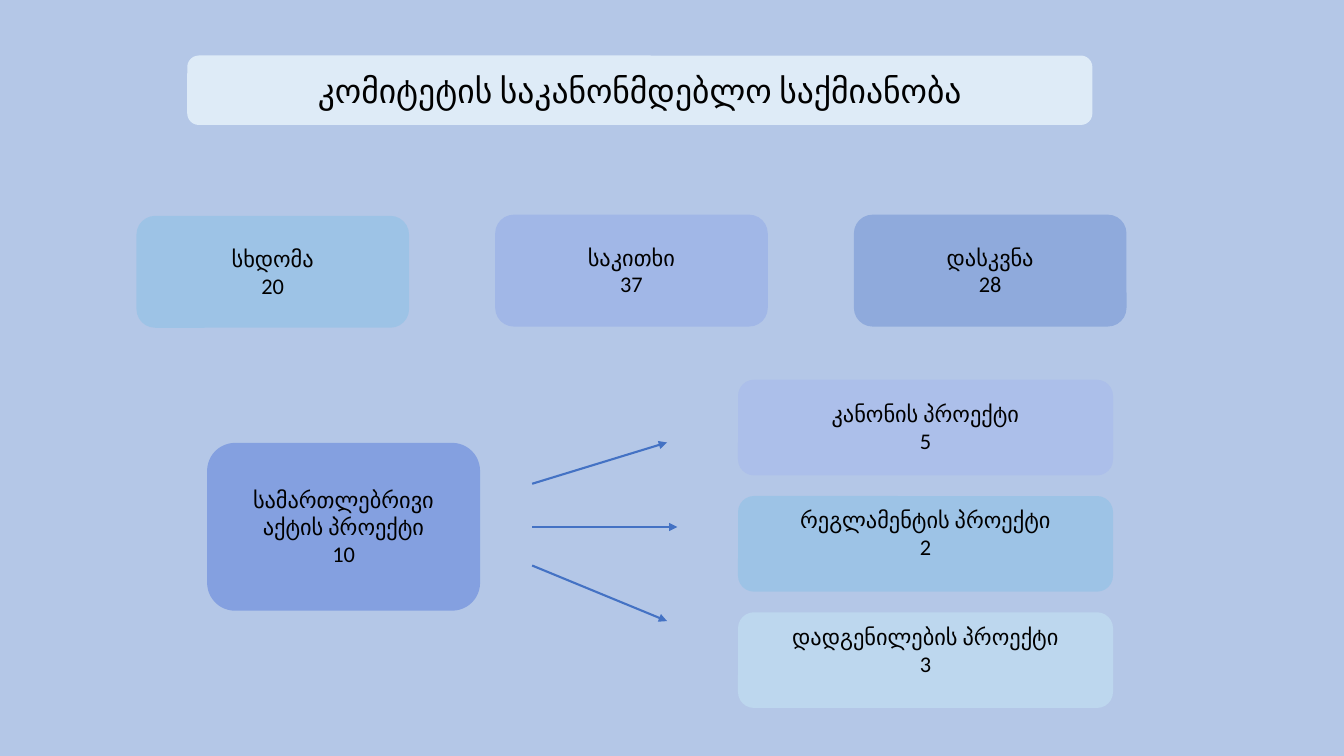
from dataclasses import dataclass

from lxml import etree
from pptx import Presentation
from pptx.dml.color import RGBColor
from pptx.enum.shapes import MSO_CONNECTOR, MSO_SHAPE
from pptx.enum.text import MSO_ANCHOR, PP_ALIGN
from pptx.oxml.ns import qn
from pptx.shapes.autoshape import Shape
from pptx.slide import Slide
from pptx.util import Cm, Pt

ROUNDED = MSO_SHAPE.ROUNDED_RECTANGLE
STRAIGHT = MSO_CONNECTOR.STRAIGHT
MIDDLE = MSO_ANCHOR.MIDDLE
CENTER = PP_ALIGN.CENTER


@dataclass(frozen=True)
class Theme:
    font: str = "Calibri"
    title_size: float = 24
    body_size: float = 16
    arrow_width: float = 1.5
    background: str = "B4C7E7"
    text: str = "000000"
    arrow: str = "4472C4"
    title_fill: str = "DEEBF7"
    sky: str = "9DC3E6"
    lavender: str = "A1B7E7"
    steel: str = "8FAADC"
    indigo: str = "84A0E0"
    lilac: str = "ACBFEA"
    ice: str = "BDD7EE"


@dataclass(frozen=True)
class Box:
    left: float
    top: float
    width: float
    height: float
    fill: str
    text: str = ""
    bottom_inset: float = 0.13


@dataclass(frozen=True)
class Arrow:
    start_y: float
    end_x: float
    end_y: float


THEME = Theme()
TITLE = Box(4.72, 1.4, 22.81, 1.75, THEME.title_fill, "კომიტეტის საკანონმდებლო საქმიანობა")
ACT = Box(5.22, 11.16, 6.88, 4.23, THEME.indigo, "სამართლებრივი აქტის პროექტი\n10")

CARD_LEFT, CARD_STEP = 3.44, 9.04
CARDS = [
    Box(CARD_LEFT + index * CARD_STEP, top, 6.87, 2.82, fill, text)
    for index, (top, fill, text) in enumerate([
        (5.44, THEME.sky, "სხდომა\n20"),
        (5.41, THEME.lavender, "საკითხი\n37"),
        (5.41, THEME.steel, "დასკვნა\n28"),
    ])
]

PROJECT_TOP, PROJECT_STEP = 9.57, 2.93
PROJECTS = [
    Box(18.6, PROJECT_TOP + index * PROJECT_STEP, 9.45, 2.41, fill, text, inset)
    for index, (fill, text, inset) in enumerate([
        (THEME.lilac, "კანონის პროექტი\n5", 0.13),
        (THEME.sky, "რეგლამენტის პროექტი\n2", 0.65),
        (THEME.ice, "დადგენილების პროექტი\n3", 0.65),
    ])
]

ARROW_START_X = 13.41
ARROWS = [Arrow(12.19, 16.81, 11.15), Arrow(13.28, 17.07, 13.28), Arrow(14.25, 16.81, 15.65)]


def color(value: str) -> RGBColor:
    return RGBColor.from_string(value)


def write_text(shape: Shape, text: str, size: float) -> None:
    text_frame = shape.text_frame
    text_frame.text = text
    text_frame.word_wrap = True
    text_frame.vertical_anchor = MIDDLE
    for paragraph in text_frame.paragraphs:
        paragraph.alignment = CENTER
        for run in paragraph.runs:
            run.font.name = THEME.font
            run.font.size = Pt(size)
            run.font.color.rgb = color(THEME.text)


def add_box(slide: Slide, box: Box) -> Shape:
    shape = slide.shapes.add_shape(
        ROUNDED, Cm(box.left), Cm(box.top), Cm(box.width), Cm(box.height)
    )
    shape.shadow.inherit = False
    shape.fill.solid()
    shape.fill.fore_color.rgb = color(box.fill)
    shape.line.fill.background()
    return shape


def add_card(slide: Slide, box: Box) -> None:
    shape = add_box(slide, box)
    write_text(shape, box.text, THEME.body_size)
    shape.text_frame.margin_bottom = Cm(box.bottom_inset)


def add_title(slide: Slide, box: Box) -> None:
    add_box(slide, box)
    title = slide.shapes.title
    title.left, title.top = Cm(box.left), Cm(box.top)
    title.width, title.height = Cm(box.width), Cm(box.height)
    write_text(title, box.text, THEME.title_size)
    tree = slide.shapes.element
    tree.remove(title.element)
    tree.append(title.element)


def add_arrow(slide: Slide, arrow: Arrow) -> None:
    connector = slide.shapes.add_connector(
        STRAIGHT, Cm(ARROW_START_X), Cm(arrow.start_y), Cm(arrow.end_x), Cm(arrow.end_y)
    )
    connector.line.color.rgb = color(THEME.arrow)
    connector.line.width = Pt(THEME.arrow_width)
    properties = connector.element.spPr
    etree.SubElement(properties.find(qn("a:ln")), qn("a:tailEnd"), type="triangle")
    etree.SubElement(properties, qn("a:effectLst"))


def main() -> None:
    presentation = Presentation()
    presentation.slide_width, presentation.slide_height = Cm(33.87), Cm(19.05)
    slide = presentation.slides.add_slide(presentation.slide_layouts.get_by_name("Title Only"))
    slide.background.fill.solid()
    slide.background.fill.fore_color.rgb = color(THEME.background)
    add_title(slide, TITLE)
    for box in [*CARDS, ACT, *PROJECTS]:
        add_card(slide, box)
    for arrow in ARROWS:
        add_arrow(slide, arrow)
    presentation.save("out.pptx")


if __name__ == "__main__":
    main()
